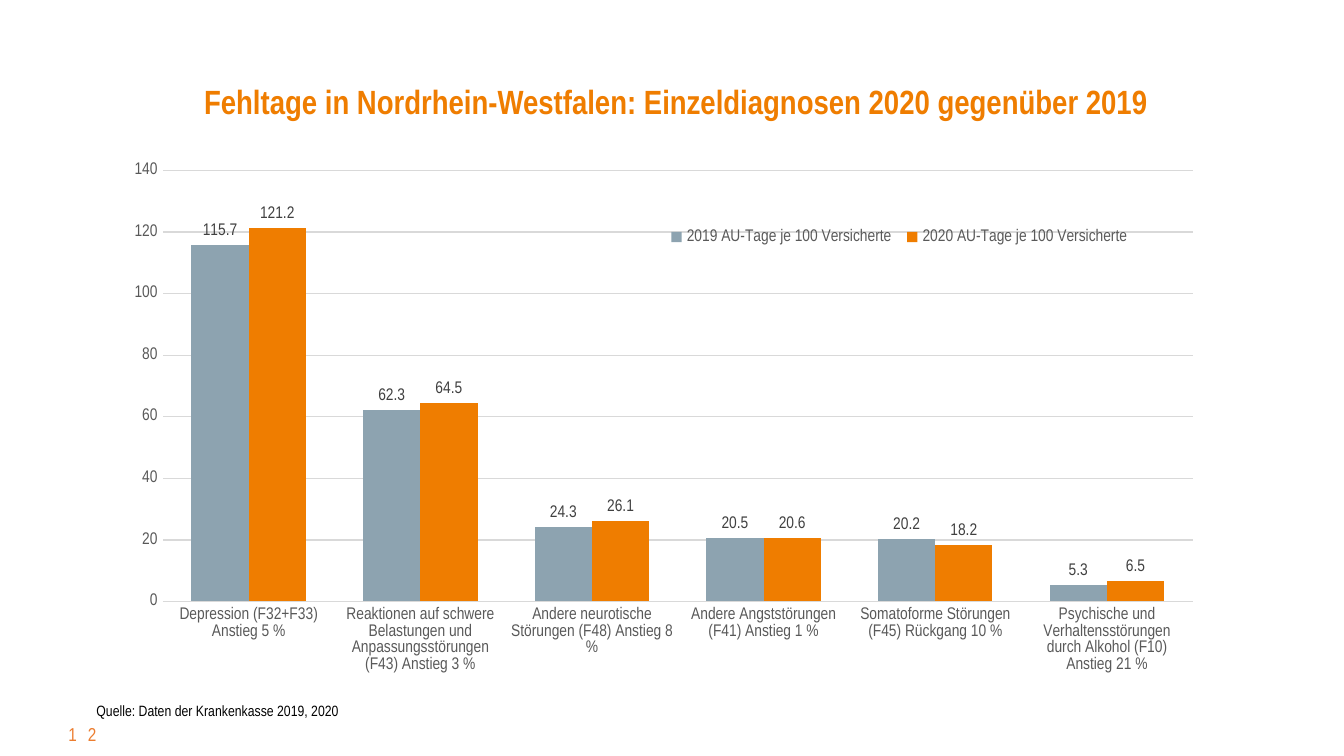
from dataclasses import dataclass

import pptx
import pptx.chart.data
import pptx.dml.color
import pptx.enum.chart
import pptx.enum.text
import pptx.oxml
import pptx.oxml.ns
import pptx.util

Pt = pptx.util.Pt
FONT = "Arial Narrow"
ORANGE = "EF7D00"
GRID = "D9D9D9"
AXIS_TEXT = "595959"


@dataclass
class Box:
    x: float
    y: float
    w: float
    h: float


@dataclass
class Label:
    text: str
    box: Box
    size: float
    color: str
    anchor: pptx.enum.text.MSO_ANCHOR
    wrap: bool = True
    bold: bool = False
    spacing: float = 0
    align: pptx.enum.text.PP_ALIGN = pptx.enum.text.PP_ALIGN.LEFT


@dataclass
class Series:
    name: str
    values: tuple
    color: str


TITLE = Label(
    "Fehltage in Nordrhein-Westfalen: Einzeldiagnosen 2020 gegenüber 2019",
    Box(37.5, 42.5, 649.5, 26), 18, ORANGE, pptx.enum.text.MSO_ANCHOR.BOTTOM,
    bold=True, align=pptx.enum.text.PP_ALIGN.CENTER,
)
FOOTERS = [
    Label("12", Box(29.5, 382.5, 168, 21.5), 10, "EC7D2F",
          pptx.enum.text.MSO_ANCHOR.MIDDLE, spacing=6),
    Label("Quelle: Daten der Krankenkasse 2019, 2020",
          Box(44.6, 372.2, 153.4, 17), 8, "000000",
          pptx.enum.text.MSO_ANCHOR.TOP, wrap=False),
]
CHART_BOX = Box(57.6, 82.8, 593.3, 285.1)
PLOT_SHARE = Box(0.05, 0.03, 0.93, 0.81)
LEGEND_SHARE = Box(0.5, 0.13, 0.43, 0.05)
CATEGORIES = [
    "Depression (F32+F33) Anstieg 5 %",
    "Reaktionen auf schwere Belastungen und Anpassungsstörungen (F43) Anstieg 3 %",
    "Andere neurotische Störungen (F48) Anstieg 8 %",
    "Andere Angststörungen (F41) Anstieg 1 %",
    "Somatoforme Störungen (F45) Rückgang 10 %",
    "Psychische und Verhaltensstörungen durch Alkohol (F10) Anstieg 21 %",
]
SERIES = [
    Series("2019 AU-Tage je 100 Versicherte",
           (115.7, 62.3, 24.3, 20.5, 20.2, 5.3), "8DA3B0"),
    Series("2020 AU-Tage je 100 Versicherte",
           (121.2, 64.5, 26.1, 20.6, 18.2, 6.5), ORANGE),
]


def paint(target, color: str) -> None:
    target.rgb = pptx.dml.color.RGBColor.from_string(color)


def set_font(font, size: float, color: str, bold: bool = False) -> None:
    font.name = FONT
    font.size = Pt(size)
    font.bold = bold
    paint(font.color, color)


def set_line(line, color: str) -> None:
    line.width = Pt(0.75)
    line.fill.solid()
    paint(line.fill.fore_color, color)


def write_label(sp, label: Label) -> None:
    box = label.box
    sp.left, sp.top, sp.width, sp.height = map(Pt, (box.x, box.y, box.w, box.h))
    tf = sp.text_frame
    tf.auto_size = pptx.enum.text.MSO_AUTO_SIZE.NONE
    tf.word_wrap = label.wrap
    tf.vertical_anchor = label.anchor
    p = tf.paragraphs[0]
    p.alignment = label.align
    r = p.add_run()
    r.text = label.text
    set_font(r.font, label.size, label.color, label.bold)
    if label.spacing:
        r.font._element.set("spc", str(int(label.spacing * 100)))


def manual_layout(share: Box, inner: bool = False):
    target = '<c:layoutTarget val="inner"/>' if inner else ""
    return pptx.oxml.parse_xml(
        f'<c:layout {pptx.oxml.ns.nsdecls("c")}><c:manualLayout>{target}'
        '<c:xMode val="edge"/><c:yMode val="edge"/>'
        f'<c:x val="{share.x}"/><c:y val="{share.y}"/>'
        f'<c:w val="{share.w}"/><c:h val="{share.h}"/>'
        '</c:manualLayout></c:layout>'
    )


def style_axes(chart) -> None:
    for axis in (chart.category_axis, chart.value_axis):
        axis.major_tick_mark = pptx.enum.chart.XL_TICK_MARK.NONE
        axis.minor_tick_mark = pptx.enum.chart.XL_TICK_MARK.NONE
        set_font(axis.tick_labels.font, 9, AXIS_TEXT)
    set_line(chart.category_axis.format.line, GRID)
    axis = chart.value_axis
    axis.minimum_scale, axis.maximum_scale, axis.major_unit = 0, 140, 20
    axis.format.line.fill.background()
    axis.tick_labels.number_format = "0"
    axis.tick_labels.number_format_is_linked = False
    axis.has_major_gridlines = True
    set_line(axis.major_gridlines.format.line, GRID)


def style_series(ser, color: str) -> None:
    ser.invert_if_negative = False
    ser.format.fill.solid()
    paint(ser.format.fill.fore_color, color)
    labels = ser.data_labels
    labels.show_value = True
    labels.position = pptx.enum.chart.XL_LABEL_POSITION.OUTSIDE_END
    labels.number_format = "0.0"
    labels.number_format_is_linked = False
    set_font(labels.font, 9, "404040")


def add_chart(s, box: Box) -> None:
    data = pptx.chart.data.CategoryChartData(number_format="0.0")
    data.categories = CATEGORIES
    for item in SERIES:
        data.add_series(item.name, item.values)
    chart = s.shapes.add_chart(
        pptx.enum.chart.XL_CHART_TYPE.COLUMN_CLUSTERED,
        *map(Pt, (box.x, box.y, box.w, box.h)), data,
    ).chart
    set_font(chart.font, 10, "000000")
    chart.has_title = False
    style_axes(chart)
    plot = chart.plots[0]
    plot.gap_width = 100
    plot.overlap = 0
    plot.vary_by_categories = False
    for ser, item in zip(plot.series, SERIES):
        style_series(ser, item.color)
    chart.has_legend = True
    legend = chart.legend
    legend.position = pptx.enum.chart.XL_LEGEND_POSITION.BOTTOM
    legend.include_in_layout = True
    set_font(legend.font, 9, AXIS_TEXT)
    legend_xml = legend._element
    plot_xml = chart._chartSpace.chart.plotArea
    for parent in (legend_xml, plot_xml):
        for old in parent.findall(pptx.oxml.ns.qn("c:layout")):
            parent.remove(old)
    legend_xml.insert(1, manual_layout(LEGEND_SHARE))
    plot_xml.insert(0, manual_layout(PLOT_SHARE, inner=True))


def main() -> None:
    prs = pptx.Presentation()
    prs.slide_width, prs.slide_height = Pt(720), Pt(405)
    s = prs.slides.add_slide(prs.slide_layouts[5])
    write_label(s.shapes.title, TITLE)
    for label in FOOTERS:
        write_label(s.shapes.add_textbox(0, 0, 0, 0), label)
    add_chart(s, CHART_BOX)
    prs.save("out.pptx")


if __name__ == "__main__":
    main()
